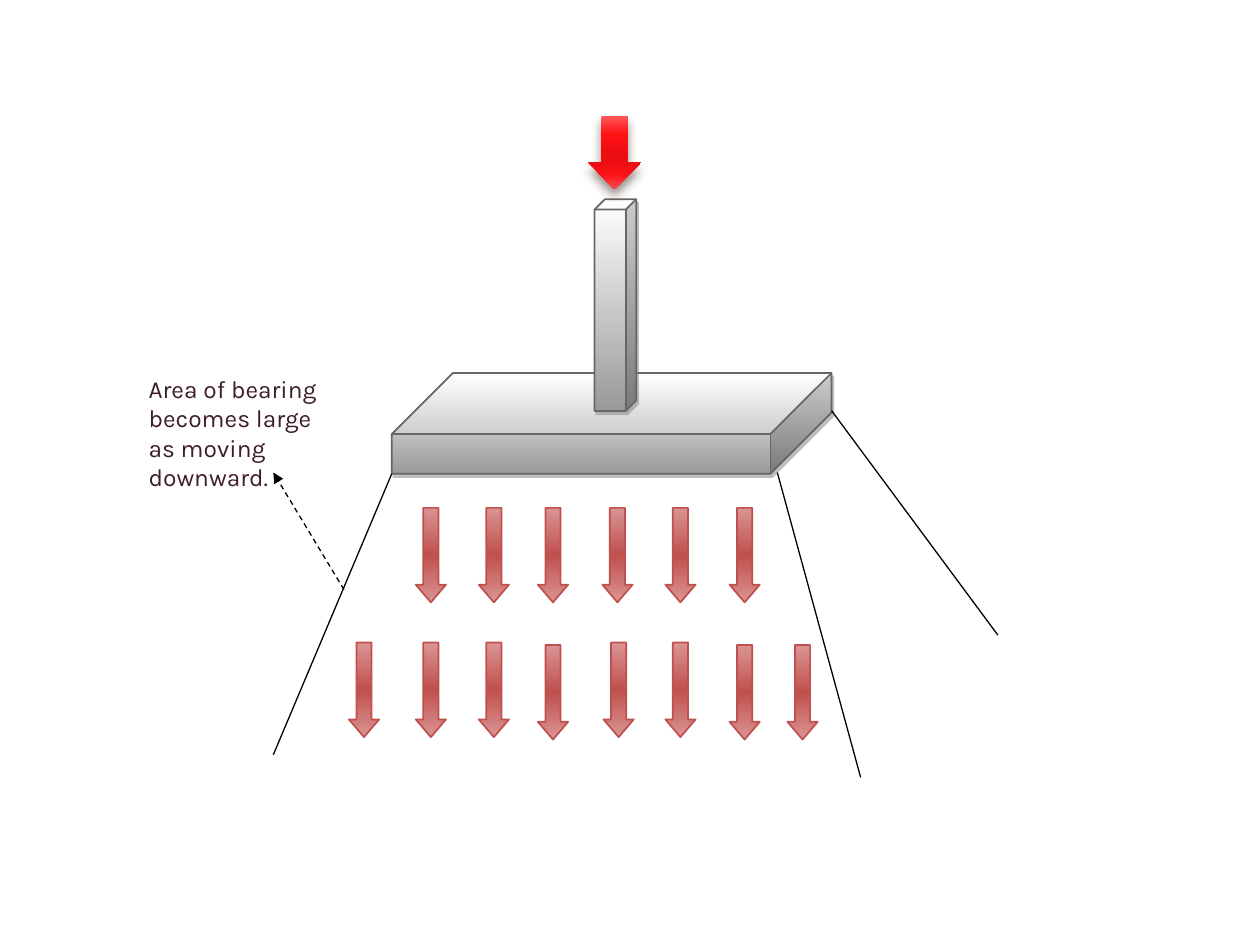
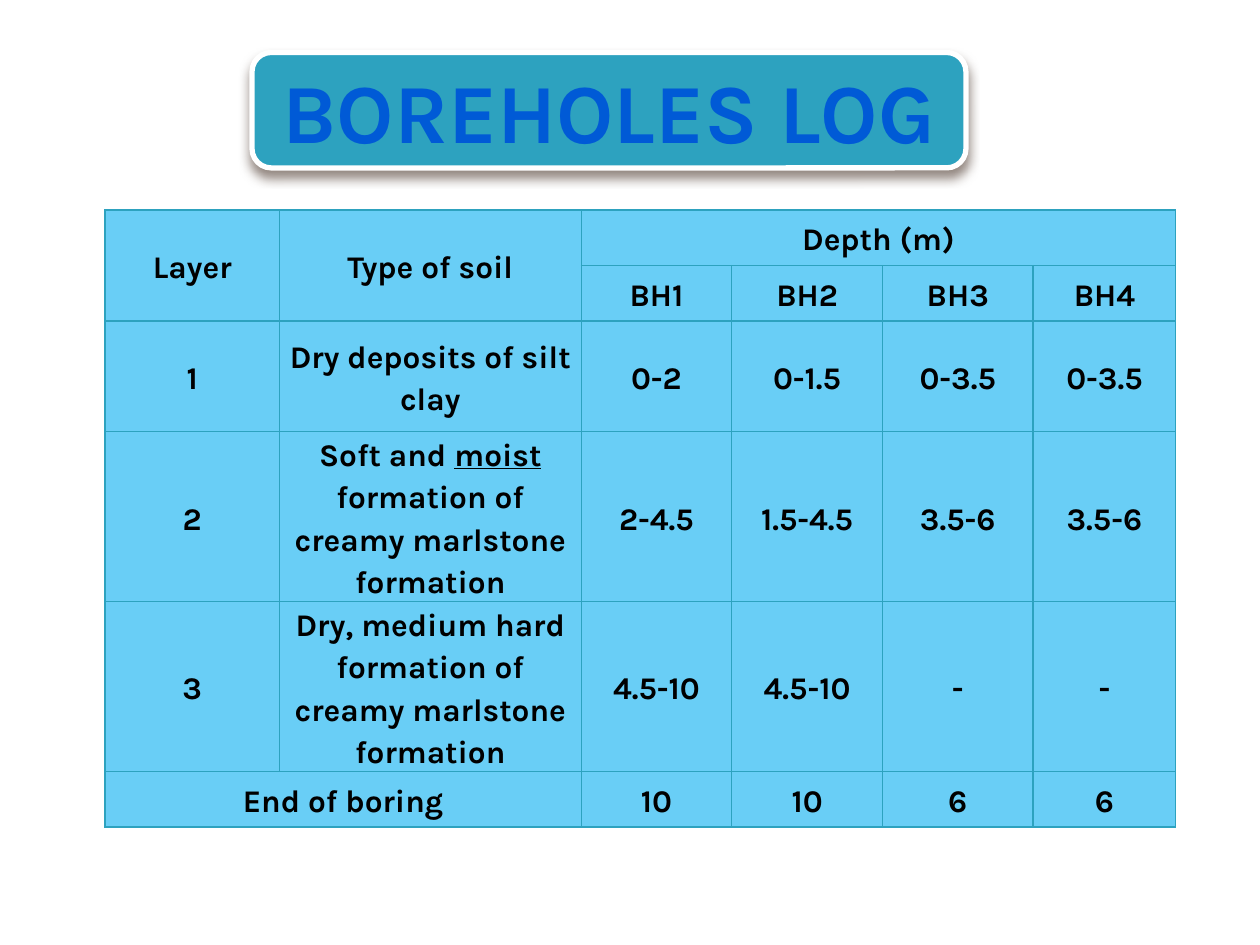
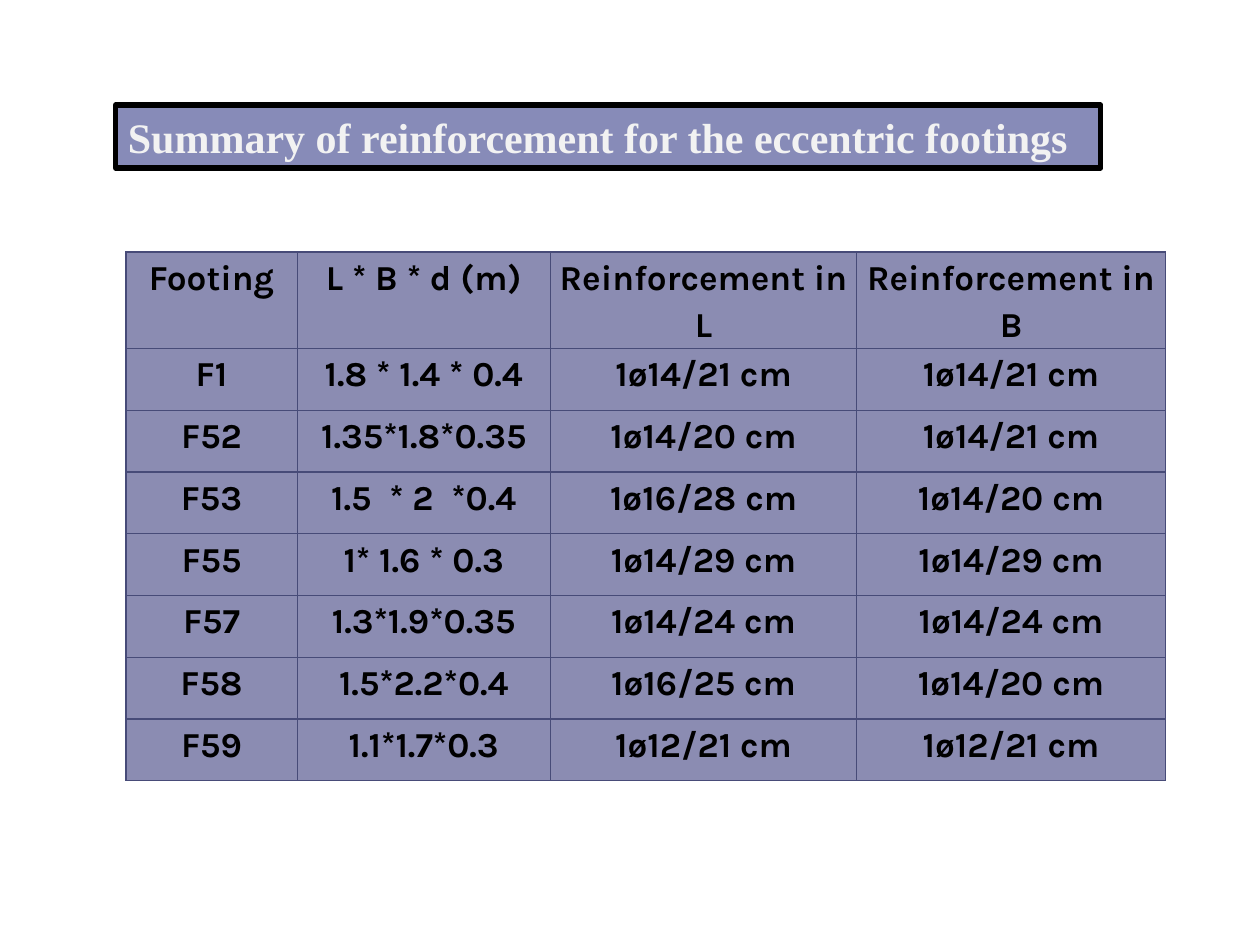
from lxml.etree import SubElement
from pptx import Presentation
from pptx.dml.color import RGBColor
from pptx.enum.dml import MSO_LINE
from pptx.enum.shapes import MSO_CONNECTOR, MSO_SHAPE
from pptx.enum.text import MSO_ANCHOR, MSO_AUTO_SIZE, PP_ALIGN
from pptx.oxml.ns import qn
from pptx.util import Pt

# Shared style
BODY_FONT, SERIF_FONT = "Karla", "Times New Roman"
BLACK, WHITE = "000000", "FFFFFF"
GREY_FADE = [(0, WHITE), (100, "999999")]
ROSE_FADE = [(0, "D99594"), (50, "C0504D"), (100, "D99594")]
RED_FADE = [(0, "FF595B"), (25, "FF1216"), (50, "ED0E12"),
            (65, "ED0E12"), (80, "FD1216"), (100, "FF4B4D")]
# Shadows: colour, opacity %, blur, distance, direction
HARD_SHADOW = ("7F7F7F", 50, 0, 2.2, 63)
SOFT_SHADOW = ("4E3B30", 60, 6, 4, 90)

# Slide 1: load spreading below a footing (left, top, width, height)
FOOTING = (223.9, 213.1, 251.3, 57.6)
COLUMN = (339.8, 113.8, 23.8, 121)
LOAD = (336.2, 66.2, 30.2, 41.8)
SPREAD_LINES = [(223.9, 270.7, 156.2, 431.3),
                (444.2, 270, 491.8, 444.2),
                (475.2, 234.7, 570.2, 362.9)]
POINTER = (196.6, 337, 156.2, 270)
NOTE = "Area of bearing becomes large as moving downward."
INNER_COLUMNS = [237.6, 273.6, 307.4, 344.2, 380.2, 416.9]
UPPER_TOP, LOWER_TOP = 290.2, 367.2
LOWER_DROPS = [(199.4, 0), (237.6, 0), (273.6, 0), (307.4, 1.4),
               (344.9, 0), (380.2, 0), (416.9, 1.4), (450, 1.4)]

# Slide 2: a tuple in a cell alternates plain and underlined text
BOREHOLE_TITLE = "BOREHOLES LOG"
BOREHOLES = [
    ["Layer", "Type of soil", "Depth (m)", "", "", ""],
    ["", "", "BH1", "BH2", "BH3", "BH4"],
    ["1", "Dry deposits of silt clay", "0-2", "0-1.5", "0-3.5", "0-3.5"],
    ["2", ("Soft and ", "moist", " formation of creamy marlstone formation"),
     "2-4.5", "1.5-4.5", "3.5-6", "3.5-6"],
    ["3", "Dry, medium hard formation of creamy marlstone formation",
     "4.5-10", "4.5-10", "-", "-"],
    ["End of boring", "", "10", "10", "6", "6"],
]
BOREHOLE_MERGES = [((0, 0), (1, 0)), ((0, 1), (1, 1)),
                   ((0, 2), (0, 5)), ((5, 0), (5, 1))]
BOREHOLE_WIDTHS = [99.7, 172.4, 86.1, 86.1, 86.1, 81.6]
BOREHOLE_HEIGHTS = [31.7, 31.7, 63.4, 95, 95, 31.7]

# Slide 3
FOOTING_TITLE = "Summary of reinforcement for the eccentric footings"
FOOTINGS = [
    ["Footing", "L * B * d (m)", "Reinforcement in L", "Reinforcement in B"],
    ["F1", "1.8 * 1.4 * 0.4", "1ø14/21 cm", "1ø14/21 cm"],
    ["F52", "1.35*1.8*0.35", "1ø14/20 cm", "1ø14/21 cm"],
    ["F53", "1.5  * 2  *0.4", "1ø16/28 cm", "1ø14/20 cm"],
    ["F55", "1* 1.6 * 0.3", "1ø14/29 cm", "1ø14/29 cm"],
    ["F57", "1.3*1.9*0.35", "1ø14/24 cm", "1ø14/24 cm"],
    ["F58", "1.5*2.2*0.4", "1ø16/25 cm", "1ø14/20 cm"],
    ["F59", "1.1*1.7*0.3", "1ø12/21 cm", "1ø12/21 cm"],
]
FOOTING_WIDTHS = [97.8, 144.8, 175, 176.4]
FOOTING_HEIGHTS = [35.28] * len(FOOTINGS)


def color(code):
    return RGBColor.from_string(code)


def fade(shape, stops):
    """Fill a shape from top to bottom with the given (percent, colour) stops."""
    shape.fill.gradient()
    shape.fill.gradient_angle = 270
    stop_list = shape._element.spPr.find(qn("a:gradFill")).find(qn("a:gsLst"))
    for stop in list(stop_list):
        stop_list.remove(stop)
    for position, code in stops:
        stop = SubElement(stop_list, qn("a:gs"), pos=str(position * 1000))
        SubElement(stop, qn("a:srgbClr"), val=code)


def cast_shadow(shape, code, opacity, blur, distance, direction):
    effects = shape._element.spPr.find(qn("a:effectLst"))
    shadow = SubElement(effects, qn("a:outerShdw"), blurRad=str(Pt(blur)),
                        dist=str(Pt(distance)), dir=str(direction * 60000),
                        algn="ctr", rotWithShape="0")
    tint = SubElement(shadow, qn("a:srgbClr"), val=code)
    SubElement(tint, qn("a:alpha"), val=str(opacity * 1000))


def add_figure(page, kind, place, fill, line=None, shadow=None, adjust=()):
    """Add a preset shape; fill is a colour or gradient, line a (colour, width)."""
    shape = page.shapes.add_shape(kind, *map(Pt, place))
    shape.shadow.inherit = False
    for index, value in enumerate(adjust):
        shape.adjustments[index] = value
    if isinstance(fill, str):
        shape.fill.solid()
        shape.fill.fore_color.rgb = color(fill)
    else:
        fade(shape, fill)
    if line:
        shape.line.color.rgb = color(line[0])
        shape.line.width = Pt(line[1])
    else:
        shape.line.fill.background()
    if shadow:
        cast_shadow(shape, *shadow)
    return shape


def add_line(page, ends):
    line = page.shapes.add_connector(MSO_CONNECTOR.STRAIGHT, *map(Pt, ends))
    line.line.color.rgb = color(BLACK)
    line.line.width = Pt(0.75)
    SubElement(line._element.spPr, qn("a:effectLst"))
    return line


def style(para, size, code, font=BODY_FONT, bold=False, align=PP_ALIGN.LEFT):
    para.alignment = align
    para.font.name = font
    para.font.size = Pt(size)
    para.font.bold = bold
    para.font.color.rgb = color(code)


def add_borders(cell, code):
    properties = cell._tc.get_or_add_tcPr()
    for side in ("a:lnL", "a:lnR", "a:lnT", "a:lnB"):
        border = SubElement(properties, qn(side), w=str(Pt(0.79)))
        SubElement(SubElement(border, qn("a:solidFill")), qn("a:srgbClr"), val=code)


def add_grid(page, left, top, rows, widths, heights, size, fill, border,
             anchor, merges=()):
    table = page.shapes.add_table(len(rows), len(widths), Pt(left), Pt(top),
                                  Pt(sum(widths)), Pt(sum(heights))).table
    table.first_row = table.horz_banding = False
    for column, width in zip(table.columns, widths):
        column.width = Pt(width)
    for row, height in zip(table.rows, heights):
        row.height = Pt(height)
    for row, texts in zip(table.rows, rows):
        for cell, text in zip(row.cells, texts):
            add_borders(cell, border)
            cell.fill.solid()
            cell.fill.fore_color.rgb = color(fill)
            cell.vertical_anchor = anchor
            cell.margin_left = cell.margin_right = Pt(5)
            cell.margin_top = cell.margin_bottom = 0
            para = cell.text_frame.paragraphs[0]
            style(para, size, BLACK, bold=True, align=PP_ALIGN.CENTER)
            para.line_spacing = 1.15
            parts = (text,) if isinstance(text, str) else text
            for index, part in enumerate(parts):
                span = para.add_run()
                span.text = part
                if index % 2:
                    span.font.underline = True
    for first, last in merges:
        table.cell(*first).merge(table.cell(*last))


def build_pressure(page):
    # Footing and column
    for place, depth in ((FOOTING, 0.606), (COLUMN, 0.25)):
        add_figure(page, MSO_SHAPE.CUBE, place, GREY_FADE, ("666666", 1),
                   HARD_SHADOW, [depth])
    for ends in SPREAD_LINES:
        add_line(page, ends)

    # Pressure arrows
    arrows = [(left, UPPER_TOP) for left in INNER_COLUMNS]
    arrows += [(left, LOWER_TOP + drop) for left, drop in LOWER_DROPS]
    for left, top in arrows:
        add_figure(page, MSO_SHAPE.DOWN_ARROW, (left, top, 17.3, 54),
                   ROSE_FADE, ("C0504D", 1), adjust=[0.5, 0.585])

    # Note with its pointer
    pointer = add_line(page, POINTER)
    pointer.line.dash_style = MSO_LINE.DASH
    SubElement(pointer.line._get_or_add_ln(), qn("a:tailEnd"), type="triangle")
    box = page.shapes.add_textbox(Pt(77.8), Pt(210.2), Pt(113.8), Pt(92.2))
    box.text_frame.word_wrap = True
    box.text_frame.text = NOTE
    style(box.text_frame.paragraphs[0], 14, "3E1E25")

    # Load on the column
    add_figure(page, MSO_SHAPE.DOWN_ARROW, LOAD, RED_FADE, shadow=SOFT_SHADOW)


def build_boreholes(page):
    title = add_figure(page, MSO_SHAPE.ROUNDED_RECTANGLE, (144, 30, 408, 66),
                       "2DA2BF", (WHITE, 3), SOFT_SHADOW)
    title.text_frame.text = BOREHOLE_TITLE
    style(title.text_frame.paragraphs[0], 48, "005AD6", bold=True,
          align=PP_ALIGN.CENTER)
    add_grid(page, 60, 120, BOREHOLES, BOREHOLE_WIDTHS, BOREHOLE_HEIGHTS, 18,
             "69CEF6", "2DA2BF", MSO_ANCHOR.MIDDLE, BOREHOLE_MERGES)


def build_footings(page):
    title = add_figure(page, MSO_SHAPE.RECTANGLE, (66, 60, 563, 36),
                       "878BB8", (BLACK, 3))
    frame = title.text_frame
    frame.text = FOOTING_TITLE
    frame.word_wrap = False
    frame.auto_size = MSO_AUTO_SIZE.SHAPE_TO_FIT_TEXT
    style(frame.paragraphs[0], 24, "F2F2F2", SERIF_FONT, bold=True)
    add_grid(page, 72, 144, FOOTINGS, FOOTING_WIDTHS, FOOTING_HEIGHTS, 20,
             "8B8CB2", "474B78", MSO_ANCHOR.TOP)


def main():
    deck = Presentation()
    deck.slide_width, deck.slide_height = Pt(720), Pt(540)
    for build in (build_pressure, build_boreholes, build_footings):
        build(deck.slides.add_slide(deck.slide_layouts[6]))
    deck.save("out.pptx")


if __name__ == "__main__":
    main()
